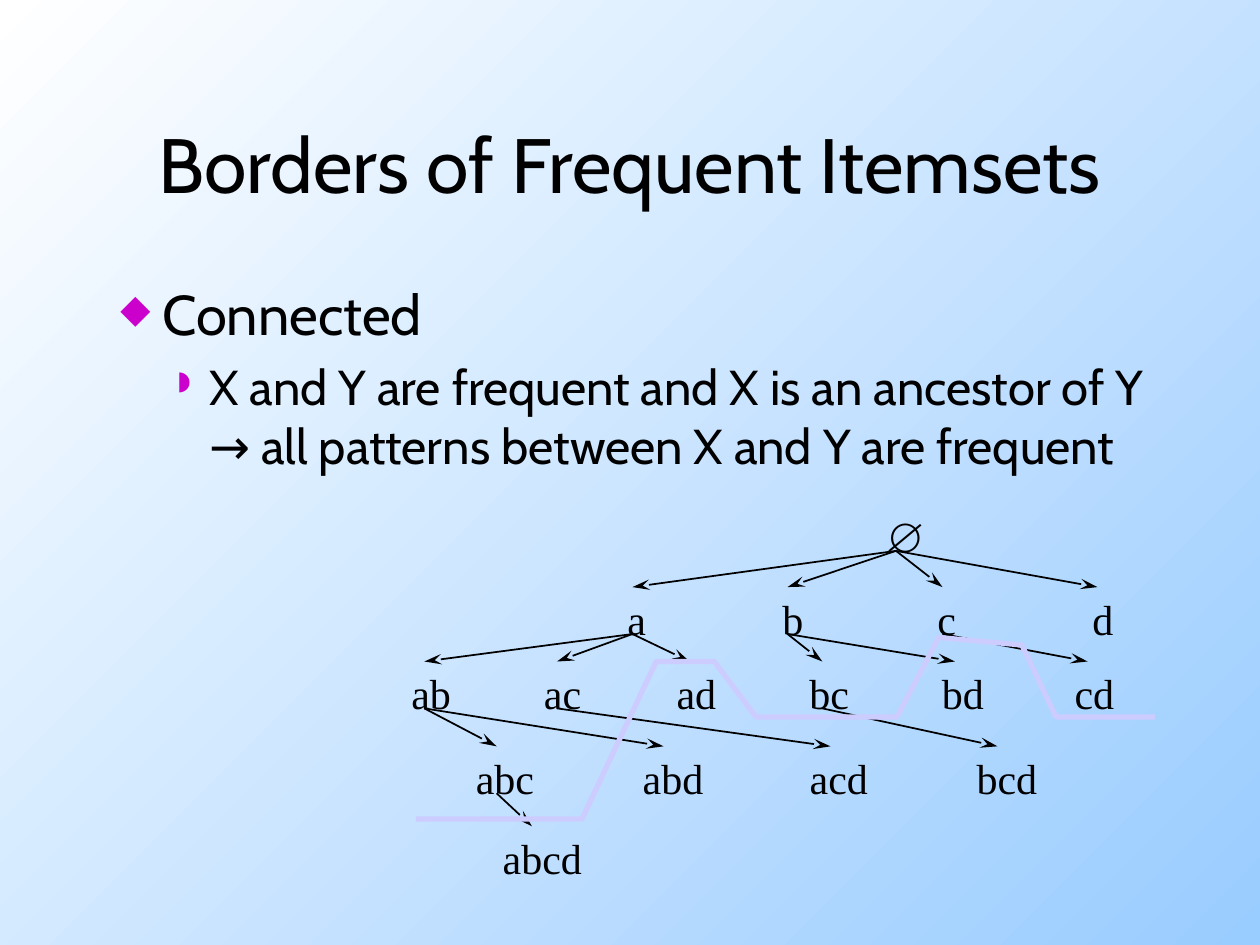
"""Build the slide on borders of frequent itemsets with its prefix tree."""
from lxml.etree import SubElement
from pptx import Presentation
from pptx.dml.color import RGBColor as RGB
from pptx.enum.shapes import MSO_CONNECTOR as CONN
from pptx.enum.text import MSO_ANCHOR as ANCHOR, MSO_AUTO_SIZE as AUTO, PP_ALIGN as ALIGN
from pptx.oxml.ns import qn
from pptx.util import Pt

COLORS = {"text": "000000", "bullet": "CC00CC", "border": "CCCCFF",
          "bg_start": "FFFFFF", "bg_end": "99CCFF"}


def add_text(p, text, size, font):
    r = p.add_run()
    r.text = text
    r.font.size = Pt(size)
    r.font.name = font
    r.font.color.rgb = RGB.from_string(COLORS["text"])


def add_box(shapes, left, top, width, height, wrap):
    sp = shapes.add_textbox(Pt(left), Pt(top), Pt(width), Pt(height))
    sp.text_frame.word_wrap = wrap
    return sp.text_frame


prs = Presentation()
prs.slide_width, prs.slide_height = Pt(720), Pt(540)
s = prs.slides.add_slide(prs.slide_layouts[6])

bg = s.background.fill
bg.gradient()
bg.gradient_angle = 315
for stop, name, pos in zip(bg.gradient_stops, ("bg_start", "bg_end"), (0, 1)):
    stop.color.rgb = RGB.from_string(COLORS[name])
    stop.position = pos

tf = add_box(s.shapes, 54, 48, 612, 90, True)
tf.vertical_anchor = ANCHOR.MIDDLE
p = tf.paragraphs[0]
p.alignment = ALIGN.CENTER
add_text(p, "Borders of Frequent Itemsets", 44, "Cabin")

tf = add_box(s.shapes, 54, 156, 612, 324, True)
bullets = [
    ("Connected", 32, "◆", 70, 31.7, -24),
    ("X and Y are frequent and X is an ancestor of Y → all patterns between X and Y are frequent",
     28, "◗", 55, 58.5, -17.5),
]
for level, (text, size, char, percent, margin, indent) in enumerate(bullets):
    p = tf.add_paragraph() if level else tf.paragraphs[0]
    p.level = level
    p.space_before = Pt(size * 0.2)
    add_text(p, text, size, "Cabin")
    pPr = p._p.get_or_add_pPr()
    pPr.set("marL", str(Pt(margin)))
    pPr.set("indent", str(Pt(indent)))
    SubElement(SubElement(pPr, qn("a:buClr")), qn("a:srgbClr"), val=COLORS["bullet"])
    SubElement(pPr, qn("a:buSzPct"), val=str(percent * 1000))
    SubElement(pPr, qn("a:buChar"), char=char)

tree = s.shapes.add_group_shape().shapes
levels = [
    (["∅"], 498.4, 288, 0, 34.6, 13.6),
    (["a", "b", "c", "d"], 351.4, 335.5, 88.6, 26.6, 10),
    (["ab", "ac", "ad", "bc", "bd", "cd"], 228, 378, 75.8, 39, 14.5),
    (["abc", "abd", "acd", "bcd"], 264.8, 426.5, 95.4, 50, 19),
    (["abcd"], 280.2, 472.2, 0, 61, 23.8),
]
anchors = {}
for names, left, top, step, width, offset in levels:
    for i, name in enumerate(names):
        x = left + i * step
        tf = add_box(tree, x, top, width, 36, False)
        tf.auto_size = AUTO.SHAPE_TO_FIT_TEXT
        add_text(tf.paragraphs[0], name, 24, "Times New Roman")
        anchors[name] = x + offset, top

for name, (x, top) in anchors.items():
    if name == "∅":
        continue
    parent_x, parent_top = anchors[name[:-1] or "∅"]
    line = tree.add_connector(CONN.STRAIGHT, Pt(parent_x), Pt(parent_top + 26.8), Pt(x), Pt(top))
    line.line.color.rgb = RGB.from_string(COLORS["text"])
    line.line.width = Pt(1)
    SubElement(line.line._get_or_add_ln(), qn("a:tailEnd"), type="stealth", w="med", len="lg")
    SubElement(line._element.spPr, qn("a:effectLst"))

border = [(237.6, 468), (332.6, 468), (375, 378), (408.2, 378), (432, 409.7),
          (512.6, 409.7), (536.4, 364.3), (584, 368.6), (603.4, 409.7), (660.2, 409.7)]
points = [(Pt(x), Pt(y)) for x, y in border]
outline = tree.build_freeform(*points[0])
outline.add_line_segments(points[1:], close=False)
sp = outline.convert_to_shape()
sp.shadow.inherit = False
sp.fill.background()
sp.line.color.rgb = RGB.from_string(COLORS["border"])
sp.line.width = Pt(3)

prs.save("out.pptx")
